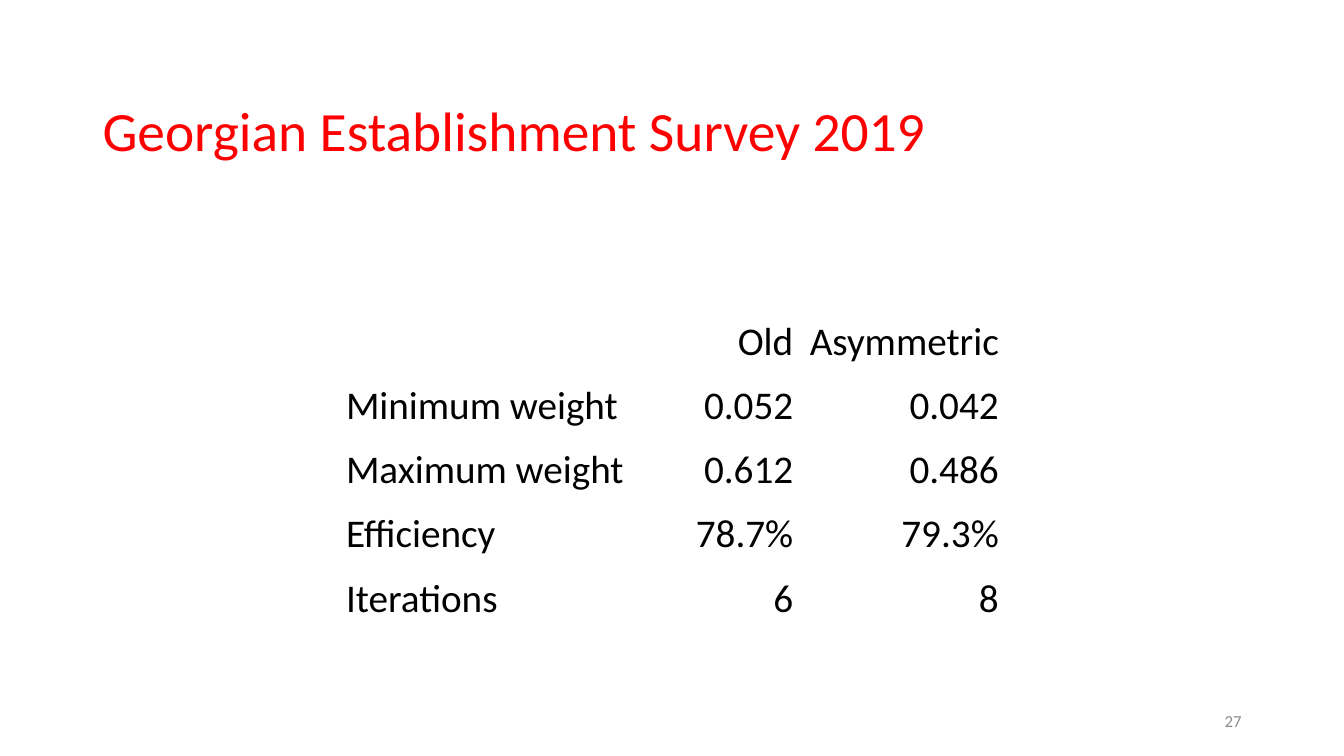
from pptx import Presentation
from pptx.dml.color import RGBColor
from pptx.enum.text import MSO_ANCHOR as Anchor, PP_ALIGN as Align
from pptx.oxml import parse_xml
from pptx.oxml.ns import nsdecls
from pptx.util import Cm, Pt

ROWS = [
    ("", "Old", "Asymmetric"),
    ("Minimum weight", "0.052", "0.042"),
    ("Maximum weight", "0.612", "0.486"),
    ("Efficiency", "78.7%", "79.3%"),
    ("Iterations", "6", "8"),
]
COLS = (7.44, 3.89, 5.18)


def color(code):
    return RGBColor.from_string(code)


def style(para, size, code, align=Align.LEFT):
    para.alignment = align
    for run in para.runs:
        run.font.name = "Calibri"
        run.font.size = Pt(size)
        run.font.bold = False
        run.font.color.rgb = color(code)


def place(shape, box):
    shape.left, shape.top, shape.width, shape.height = map(Cm, box)


def border(cell, code):
    props = cell._tc.get_or_add_tcPr()
    for spot, side in enumerate("LRTB"):
        props.insert(spot, parse_xml(
            f'<a:ln{side} {nsdecls("a")} w="12700"><a:solidFill>'
            f'<a:srgbClr val="{code}"/></a:solidFill></a:ln{side}>'))


def add_title(slide, box):
    title = slide.shapes.title
    place(title, box)
    frame = title.text_frame
    frame.text = "Georgian Establishment Survey 2019"
    frame.word_wrap = True
    frame.vertical_anchor = Anchor.TOP
    frame.margin_top = 0
    para = frame.paragraphs[0]
    para.line_spacing = 0.9
    style(para, 39.6, "FF0000")


def fill_cell(cell, text, align):
    cell.fill.background()
    border(cell, "FFFFFF")
    cell.vertical_anchor = Anchor.BOTTOM
    cell.margin_left = cell.margin_right = cell.margin_top = Cm(0.03)
    cell.margin_bottom = 0
    cell.text = text
    style(cell.text_frame.paragraphs[0], 28, "000000", align)


def add_grid(slide, box):
    table = slide.shapes.add_table(len(ROWS), len(COLS), *map(Cm, box)).table
    table.first_row = table.horz_banding = False
    for col, width in zip(table.columns, COLS):
        col.width = Cm(width)
    for r, row in enumerate(ROWS):
        for c, text in enumerate(row):
            fill_cell(table.cell(r, c), text, Align.RIGHT if c else Align.LEFT)


def add_number(slide, box):
    frame = slide.shapes.add_textbox(*map(Cm, box)).text_frame
    frame.word_wrap = True
    frame.vertical_anchor = Anchor.MIDDLE
    frame.text = "27"
    style(frame.paragraphs[0], 12, "8C8C8C", Align.RIGHT)


def main():
    deck = Presentation()
    deck.slide_width, deck.slide_height = Cm(33.87), Cm(19.05)
    slide = deck.slides.add_slide(deck.slide_layouts[5])
    add_title(slide, (2.33, 2.62, 29.21, 2.8))
    add_grid(slide, (8.69, 7.6, sum(COLS), 8.09))
    add_number(slide, (23.92, 17.66, 7.62, 1.01))
    deck.save("out.pptx")


if __name__ == "__main__":
    main()
